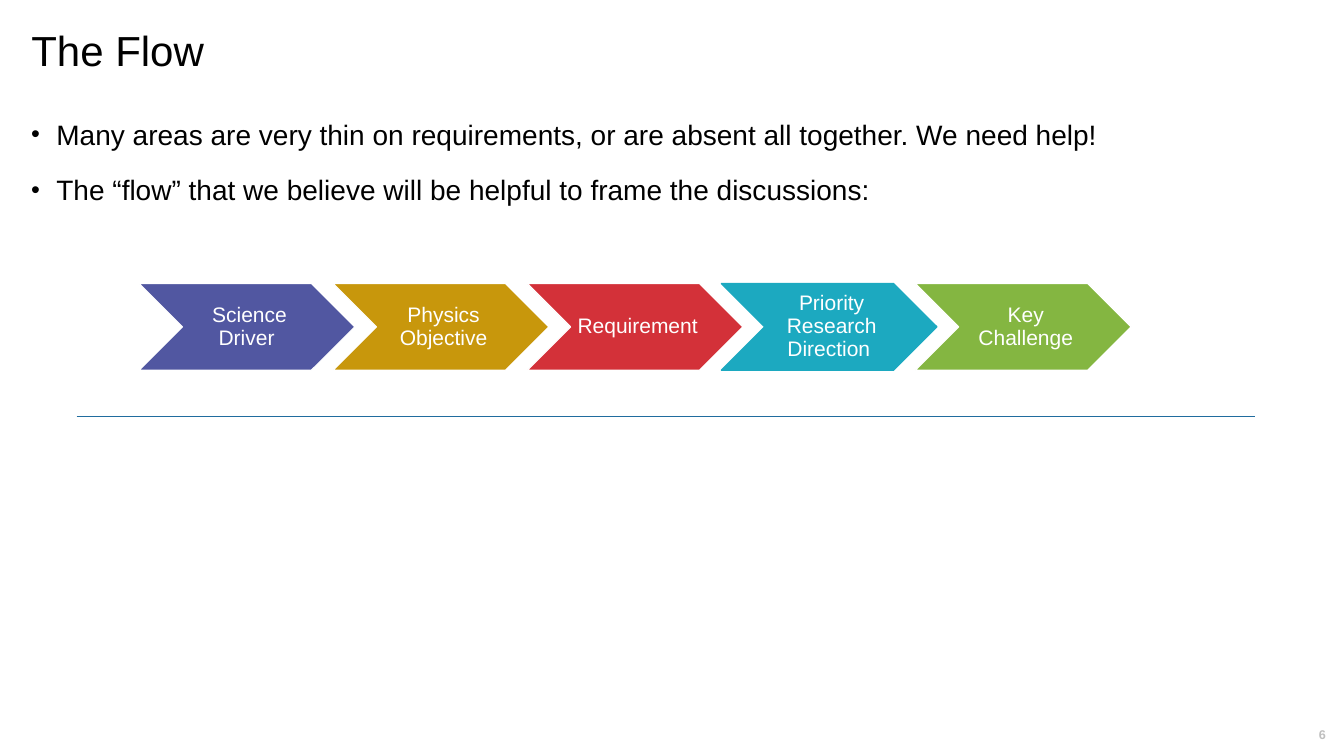
from dataclasses import dataclass

from lxml import etree
from pptx import Presentation
from pptx.dml.color import RGBColor
from pptx.enum.shapes import MSO_CONNECTOR, MSO_SHAPE
from pptx.enum.text import MSO_ANCHOR, MSO_AUTO_SIZE, PP_ALIGN
from pptx.oxml.ns import qn
from pptx.slide import Slide
from pptx.text.text import TextFrame
from pptx.util import Inches, Pt

CHEVRON, STRAIGHT = MSO_SHAPE.CHEVRON, MSO_CONNECTOR.STRAIGHT
TOP, MIDDLE = MSO_ANCHOR.TOP, MSO_ANCHOR.MIDDLE
LEFT, CENTER = PP_ALIGN.LEFT, PP_ALIGN.CENTER
NO_AUTOFIT = MSO_AUTO_SIZE.NONE
SLIDE_WIDTH, SLIDE_HEIGHT = Inches(13.33), Inches(7.5)
TITLE_ONLY = 5


@dataclass(frozen=True)
class Theme:
    """Colours and type sizes of the slide."""
    face: str = "Arial"
    ink: str = "000000"
    paper: str = "FFFFFF"
    muted: str = "BFBFBF"
    rule: str = "206C9E"
    title_size: float = 30
    body_size: float = 20
    stage_size: float = 15
    number_size: float = 9
    outline: float = 0.85


@dataclass(frozen=True)
class Area:
    """A rectangle in percent of the slide's width and height."""
    left: float
    top: float
    width: float
    height: float

    def box(self) -> tuple[int, int, int, int]:
        """Return left, top, width and height in EMU."""
        return (across(self.left), down(self.top),
                across(self.width), down(self.height))


@dataclass(frozen=True)
class Stage:
    """One step of the flow."""
    label: str
    fill: str
    edge: str


@dataclass(frozen=True)
class TextStyle:
    """How the text of one area is set."""
    size: float
    color: str
    align: PP_ALIGN = LEFT
    anchor: MSO_ANCHOR = TOP
    bold: bool = False
    insets: tuple[float, float, float, float] = (0.1, 0.05, 0.1, 0.05)
    gap: float = 0
    bulleted: bool = False


THEME = Theme()
TITLE_AREA = Area(1.58, 3.33, 95.65, 13.2)
BODY_AREA = Area(1.58, 15.33, 95.65, 67.2)
NUMBER_AREA = Area(97.22, 96.13, 2.33, 2.27)
FIRST_STAGE = Area(10.35, 37.5, 16.05, 11.47)
STAGE_PITCH = 14.44
LABEL_INDENT, LABEL_WIDTH = 3.15, 9.75
RULE_START, RULE_END, RULE_ROW = 5.7, 93.4, 55.07

TITLE_STYLE = TextStyle(THEME.title_size, THEME.ink)
BODY_STYLE = TextStyle(THEME.body_size, THEME.ink, gap=18, bulleted=True)
STAGE_STYLE = TextStyle(THEME.stage_size, THEME.paper, CENTER, MIDDLE,
                        insets=(0.07, 0.02, 0.02, 0.02))
NUMBER_STYLE = TextStyle(THEME.number_size, THEME.muted, CENTER, MIDDLE,
                         bold=True, insets=(0, 0, 0, 0))

POINTS = [
    "Many areas are very thin on requirements, or are absent all together. We need help!",
    "The “flow” that we believe will be helpful to frame the discussions:",
]
STAGES = [
    Stage("Science Driver ", "5157A1", THEME.paper),
    Stage("Physics Objective", "C8970C", THEME.paper),
    Stage("Requirement ", "D33139", THEME.paper),
    Stage("Priority Research Direction ", "1CA9C0", "1CA9C0"),
    Stage("Key Challenge", "84B641", THEME.paper),
]


def across(percent: float) -> int:
    """Convert a share of the slide's width to EMU."""
    return round(SLIDE_WIDTH * percent / 100)


def down(percent: float) -> int:
    """Convert a share of the slide's height to EMU."""
    return round(SLIDE_HEIGHT * percent / 100)


def apply(target: object, values: dict[str, object]) -> None:
    """Set each named attribute on the target."""
    for name, value in values.items():
        setattr(target, name, value)


def add_bullet(paragraph) -> None:
    """Give a paragraph a hanging round bullet."""
    properties = paragraph._p.get_or_add_pPr()
    properties.set("marL", str(Inches(0.25)))
    properties.set("indent", str(-Inches(0.25)))
    color = etree.SubElement(properties, qn("a:buClr"))
    etree.SubElement(color, qn("a:srgbClr")).set("val", THEME.ink)
    etree.SubElement(properties, qn("a:buSzPct")).set("val", "90000")
    etree.SubElement(properties, qn("a:buFont")).set("typeface", THEME.face)
    etree.SubElement(properties, qn("a:buChar")).set("char", "•")


def write(frame: TextFrame, lines: list[str], style: TextStyle) -> None:
    """Fill a text frame with styled paragraphs."""
    left, top, right, bottom = map(Inches, style.insets)
    apply(frame, {"word_wrap": True, "auto_size": NO_AUTOFIT,
                  "vertical_anchor": style.anchor,
                  "margin_left": left, "margin_top": top,
                  "margin_right": right, "margin_bottom": bottom})
    for index, line in enumerate(lines):
        paragraph = frame.add_paragraph() if index else frame.paragraphs[0]
        if style.bulleted:
            add_bullet(paragraph)
        apply(paragraph, {"text": line, "alignment": style.align,
                          "line_spacing": 0.9,
                          "space_before": Pt(style.gap if index else 0)})
        font = paragraph.runs[0].font
        apply(font, {"name": THEME.face, "size": Pt(style.size),
                     "bold": style.bold})
        font.color.rgb = RGBColor.from_string(style.color)


def add_text(slide: Slide, area: Area, lines: list[str], style: TextStyle) -> None:
    """Place a text box on the slide."""
    write(slide.shapes.add_textbox(*area.box()).text_frame, lines, style)


def add_title(slide: Slide, wording: str) -> None:
    """Move and format the title placeholder."""
    title = slide.shapes.title
    apply(title, dict(zip(("left", "top", "width", "height"), TITLE_AREA.box())))
    write(title.text_frame, [wording], TITLE_STYLE)


def add_stage(slide: Slide, stage: Stage, position: int) -> None:
    """Draw one chevron of the flow with its label."""
    left = FIRST_STAGE.left + position * STAGE_PITCH
    area = Area(left, FIRST_STAGE.top, FIRST_STAGE.width, FIRST_STAGE.height)
    arrow = slide.shapes.add_shape(CHEVRON, *area.box())
    arrow.shadow.inherit = False
    arrow.fill.solid()
    arrow.fill.fore_color.rgb = RGBColor.from_string(stage.fill)
    arrow.line.color.rgb = RGBColor.from_string(stage.edge)
    arrow.line.width = Pt(THEME.outline)
    label_area = Area(left + LABEL_INDENT, area.top, LABEL_WIDTH, area.height)
    add_text(slide, label_area, [stage.label], STAGE_STYLE)


def add_rule(slide: Slide) -> None:
    """Draw the line below the flow."""
    row = down(RULE_ROW)
    rule = slide.shapes.add_connector(
        STRAIGHT, across(RULE_START), row, across(RULE_END), row)
    rule.line.color.rgb = RGBColor.from_string(THEME.rule)
    rule.line.width = Pt(1)
    etree.SubElement(rule._element.spPr, qn("a:effectLst"))


def main() -> None:
    """Build and save the slide."""
    deck = Presentation()
    apply(deck, {"slide_width": SLIDE_WIDTH, "slide_height": SLIDE_HEIGHT})
    slide = deck.slides.add_slide(deck.slide_layouts[TITLE_ONLY])
    add_text(slide, NUMBER_AREA, ["6"], NUMBER_STYLE)
    for position, stage in enumerate(STAGES):
        add_stage(slide, stage, position)
    add_title(slide, "The Flow")
    add_text(slide, BODY_AREA, POINTS, BODY_STYLE)
    add_rule(slide)
    deck.save("out.pptx")


if __name__ == "__main__":
    main()
